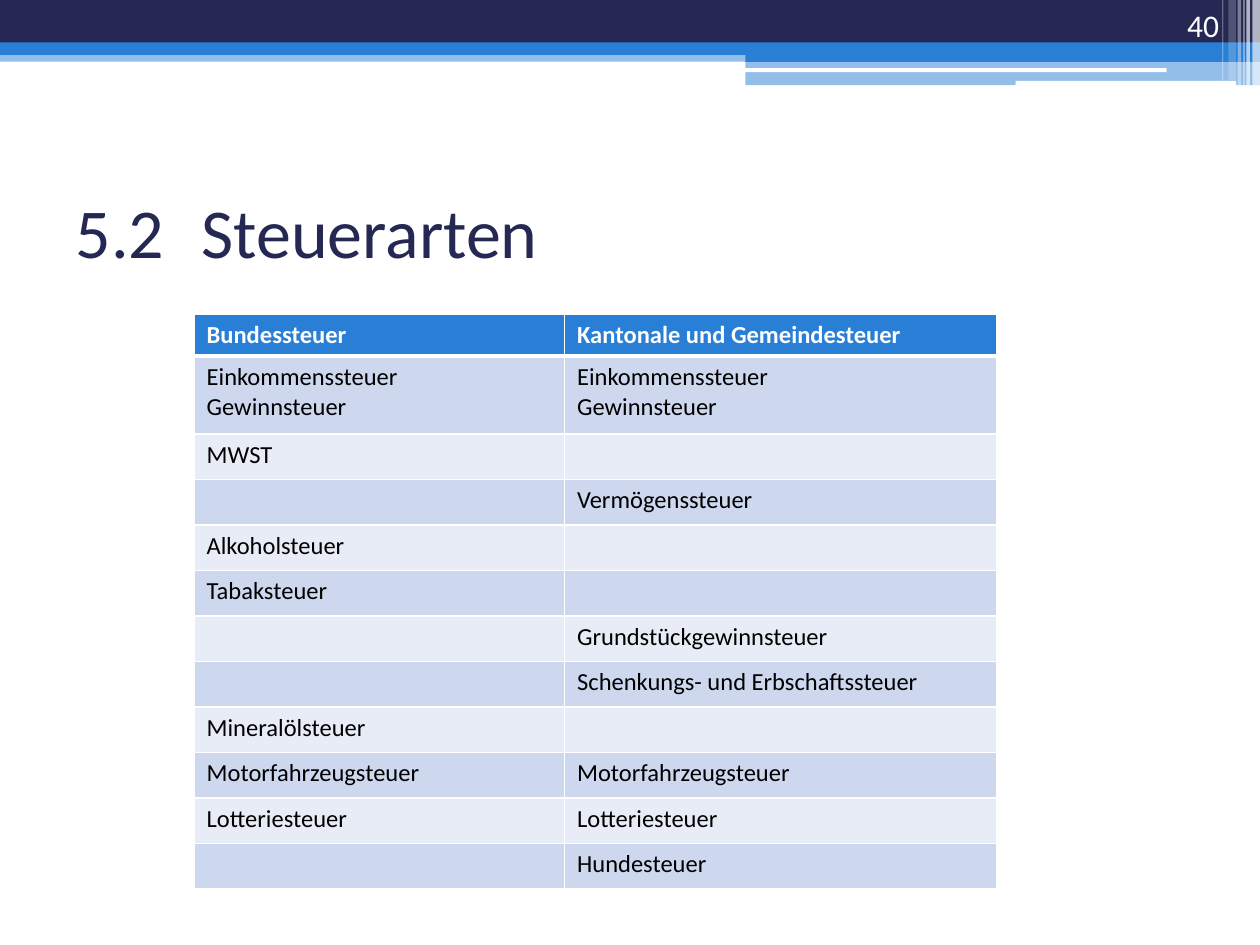
import pptx
import pptx.util
import pptx.dml.color
import pptx.enum.shapes
import pptx.enum.text
import pptx.oxml
import pptx.oxml.ns

Pt = pptx.util.Pt
SHAPE = pptx.enum.shapes.MSO_SHAPE
ALIGN = pptx.enum.text.PP_ALIGN
ANCHOR = pptx.enum.text.MSO_ANCHOR
NS = pptx.oxml.ns.nsdecls("a")

FONT = "Calibri"
NAVY, BLUE, WHITE, BLACK = "242852", "297FD5", "FFFFFF", "000000"
BANDS = ("CDD8EF", "E8ECF7")

# left, top, width, height, colour, opacity in percent
BARS = [
    (0, 28.8, 720, 6.5, BLUE, 50),
    (0, 0, 720, 24.5, NAVY, 100),
    (0, 24.2, 720, 7.2, BLUE, 100),
    (426, 28, 294, 7.4, BLUE, 100),
    (426, 34.7, 294, 14, BLUE, 50),
]
ROUNDED_BARS = [
    (425.5, 39, 241.2, 2.2, WHITE, 100),
    (580.3, 46.2, 126, 2.8, WHITE, 100),
]
STRIPES = [
    (715.7, 0, 4.3, 49, WHITE, 65),
    (712.2, 0, 2, 49, WHITE, 65),
    (710.5, 0, 0.8, 49, WHITE, 60),
    (707.2, 0, 2, 49, WHITE, 40),
    (702, 0, 4.3, 46, WHITE, 20),
    (698.4, 0, 0.8, 46, WHITE, 30),
]

TAXES = [
    ("Bundessteuer", "Kantonale und Gemeindesteuer"),
    ("Einkommenssteuer\nGewinnsteuer", "Einkommenssteuer\nGewinnsteuer"),
    ("MWST", ""),
    ("", "Vermögenssteuer"),
    ("Alkoholsteuer", ""),
    ("Tabaksteuer", ""),
    ("", "Grundstückgewinnsteuer"),
    ("", "Schenkungs- und Erbschaftssteuer"),
    ("Mineralölsteuer", ""),
    ("Motorfahrzeugsteuer", "Motorfahrzeugsteuer"),
    ("Lotteriesteuer", "Lotteriesteuer"),
    ("", "Hundesteuer"),
]
COL_WIDTHS = (211.7, 247)
ROW_HEIGHTS = [24, 44.6] + [26] * 10


def rgb(colour):
    return pptx.dml.color.RGBColor.from_string(colour)


def write(p, text, size, colour, bold=False, align=ALIGN.LEFT):
    p.text = text
    p.alignment = align
    p.font.name, p.font.size, p.font.bold = FONT, Pt(size), bold
    p.font.color.rgb = rgb(colour)


def add_bar(s, kind, x, y, w, h, colour, opacity):
    sp = s.shapes.add_shape(kind, Pt(x), Pt(y), Pt(w), Pt(h))
    sp.shadow.inherit = False
    sp.line.fill.background()
    sp.fill.solid()
    sp.fill.fore_color.rgb = rgb(colour)
    if opacity < 100:
        clr = sp._element.spPr.find(".//" + pptx.oxml.ns.qn("a:srgbClr"))
        clr.append(pptx.oxml.parse_xml(f'<a:alpha {NS} val="{opacity * 1000}"/>'))


def set_title(s, text):
    sp = s.shapes.title
    sp.left, sp.top, sp.width, sp.height = Pt(36), Pt(90), Pt(648), Pt(84)
    tf = sp.text_frame
    tf.vertical_anchor = ANCHOR.MIDDLE
    tf.auto_size = pptx.enum.text.MSO_AUTO_SIZE.NONE
    write(tf.paragraphs[0], text, 40, NAVY)


def add_page_number(s, number):
    tf = s.shapes.add_textbox(Pt(643.7), Pt(0), Pt(60), Pt(28.8)).text_frame
    tf.word_wrap = True
    tf.vertical_anchor = ANCHOR.BOTTOM
    write(tf.paragraphs[0], number, 18, WHITE, align=ALIGN.RIGHT)


def set_borders(cell, top, bottom):
    tc_pr = cell._tc.get_or_add_tcPr()
    for i, (side, width) in enumerate(zip("LRTB", (1, 1, top, bottom))):
        tc_pr.insert(i, pptx.oxml.parse_xml(
            f'<a:ln{side} {NS} w="{Pt(width)}"><a:solidFill>'
            f'<a:srgbClr val="{WHITE}"/></a:solidFill></a:ln{side}>'))


def add_tax_table(s):
    table = s.shapes.add_table(
        len(TAXES), len(COL_WIDTHS), Pt(110.9), Pt(179.3),
        Pt(sum(COL_WIDTHS)), Pt(sum(ROW_HEIGHTS))).table
    for col, width in zip(table.columns, COL_WIDTHS):
        col.width = Pt(width)
    for i, (row, height) in enumerate(zip(table.rows, ROW_HEIGHTS)):
        row.height = Pt(height)
        header = i == 0
        for cell, text in zip(row.cells, TAXES[i]):
            write(cell.text_frame.paragraphs[0], text, 14,
                  WHITE if header else BLACK, bold=header)
            cell.fill.solid()
            cell.fill.fore_color.rgb = rgb(BLUE if header else BANDS[(i - 1) % 2])
            # A thick rule separates the header from the body
            set_borders(cell, 3 if i == 1 else 1, 3 if header else 1)


def main():
    prs = pptx.Presentation()
    prs.slide_width, prs.slide_height = Pt(720), Pt(540)
    s = prs.slides.add_slide(prs.slide_layouts[5])

    # Banner
    for bar in BARS:
        add_bar(s, SHAPE.RECTANGLE, *bar)
    for bar in ROUNDED_BARS:
        add_bar(s, SHAPE.ROUNDED_RECTANGLE, *bar)
    for stripe in STRIPES:
        add_bar(s, SHAPE.RECTANGLE, *stripe)

    # Content
    set_title(s, "5.2\tSteuerarten")
    add_page_number(s, "40")
    add_tax_table(s)
    prs.save("out.pptx")


if __name__ == "__main__":
    main()
